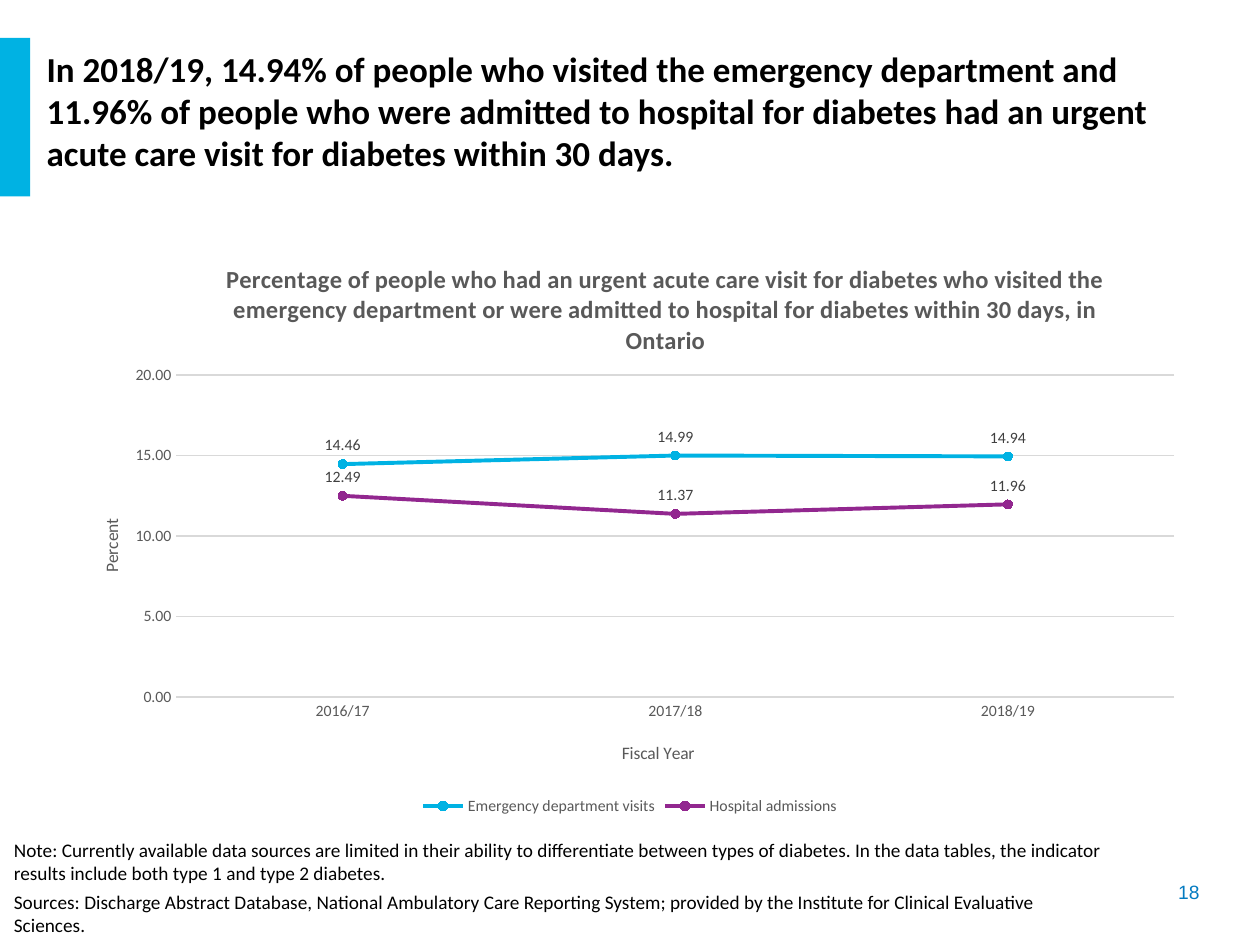
"""Build the slide on urgent acute care visits for diabetes in Ontario."""
from dataclasses import dataclass

from lxml.etree import SubElement
from pptx import Presentation
from pptx.chart.data import CategoryChartData
from pptx.dml.color import RGBColor
from pptx.enum.chart import (XL_CHART_TYPE, XL_LABEL_POSITION, XL_LEGEND_POSITION,
                             XL_MARKER_STYLE, XL_TICK_MARK)
from pptx.enum.dml import MSO_LINE
from pptx.enum.shapes import MSO_SHAPE
from pptx.enum.text import MSO_ANCHOR, MSO_AUTO_SIZE, PP_ALIGN
from pptx.oxml.ns import qn
from pptx.util import Inches, Pt

COLUMNS, ROWS = 100, 75
WIDTH, HEIGHT = Inches(10), Inches(7.5)
CYAN, PURPLE, GREY, PALE = "00B2E3", "92278F", "595959", "D9D9D9"
NUMBER_FORMAT = "####0.00"
YEARS = ["2016/17", "2017/18", "2018/19"]
HEADLINE = ("In 2018/19, 14.94% of people who visited the emergency department and \v"
            "11.96% of people who were admitted to hospital for diabetes had an urgent \v"
            "acute care visit for diabetes within 30 days.")
CHART_TITLE = ("Percentage of people who had an urgent acute care visit for diabetes "
               "who visited the emergency department or were admitted to hospital "
               "for diabetes within 30 days, in Ontario")
NOTES = [
    "Note: Currently available data sources are limited in their ability to differentiate "
    "between types of diabetes. In the data tables, the indicator results include both "
    "type 1 and type 2 diabetes.",
    "Sources: Discharge Abstract Database, National Ambulatory Care Reporting System; "
    "provided by the Institute for Clinical Evaluative Sciences.",
]


@dataclass(frozen=True)
class Area:
    """A rectangle in grid columns and rows."""
    column: float
    row: float
    columns: float
    rows: float

    def lengths(self) -> tuple:
        """Return left, top, width and height."""
        return (int(WIDTH * self.column / COLUMNS), int(HEIGHT * self.row / ROWS),
                int(WIDTH * self.columns / COLUMNS), int(HEIGHT * self.rows / ROWS))


@dataclass(frozen=True)
class Measure:
    """One line of the chart."""
    name: str
    values: tuple
    color: str


MEASURES = [
    Measure("Emergency department visits", (14.46, 14.99, 14.94), CYAN),
    Measure("Hospital admissions", (12.49, 11.37, 11.96), PURPLE),
]


def rgb(value: str) -> RGBColor:
    """Turn a hex string into a colour."""
    return RGBColor.from_string(value)


def style(font, size: float, color: str, bold: bool = False, name: str = "Calibri") -> None:
    """Format a font."""
    font.name, font.size, font.bold = name, Pt(size), bold
    font.color.rgb = rgb(color)


def place(box, area: Area) -> None:
    """Move a shape to an area."""
    box.left, box.top, box.width, box.height = area.lengths()


def prepare(box, anchor: MSO_ANCHOR) -> None:
    """Give a text shape wrapping, an anchor and a fixed size."""
    frame = box.text_frame
    frame.word_wrap = True
    frame.auto_size = MSO_AUTO_SIZE.NONE
    frame.vertical_anchor = anchor


def set_layout(element, inner: bool = False, **shares: float) -> None:
    """Fix a chart part at shares of the chart's size."""
    layout = element.find(qn("c:layout"))
    if layout is None:
        layout = element.makeelement(qn("c:layout"))
        text = element.find(qn("c:tx"))
        element.insert(0 if text is None else element.index(text) + 1, layout)
    for child in list(layout):
        layout.remove(child)
    manual = SubElement(layout, qn("c:manualLayout"))
    if inner:
        SubElement(manual, qn("c:layoutTarget"), val="inner")
    for key in ("x", "y"):
        SubElement(manual, qn(f"c:{key}Mode"), val="edge")
    for key, share in shares.items():
        SubElement(manual, qn(f"c:{key}"), val=str(share))


def write_title(title, text: str, size: float, x: float, y: float, bold: bool = False) -> None:
    """Write and place a chart or axis title."""
    title.text_frame.text = text
    style(title.text_frame.paragraphs[0].font, size, GREY, bold)
    set_layout(title._element, x=x, y=y)


def format_axis(axis, title: str, x: float, y: float) -> None:
    """Format one axis and its title."""
    axis.major_tick_mark = axis.minor_tick_mark = XL_TICK_MARK.NONE
    style(axis.tick_labels.font, 9, GREY)
    write_title(axis.axis_title, title, 10, x, y)


def format_series(series, color: str) -> None:
    """Format a line with its markers and labels."""
    series.smooth = False
    series.format.line.width = Pt(2.25)
    series.marker.style, series.marker.size = XL_MARKER_STYLE.CIRCLE, 5
    series.marker.format.fill.solid()
    series.marker.format.fill.fore_color.rgb = rgb(color)
    for line in (series.format.line, series.marker.format.line):
        line.color.rgb = rgb(color)
    labels = series.data_labels
    labels.show_value, labels.position = True, XL_LABEL_POSITION.ABOVE
    labels.number_format, labels.number_format_is_linked = NUMBER_FORMAT, False
    style(labels.font, 9, "404040")


def add_line_chart(page, area: Area) -> None:
    """Add the chart of both measures over the fiscal years."""
    data = CategoryChartData(number_format=NUMBER_FORMAT)
    data.categories = YEARS
    for measure in MEASURES:
        data.add_series(measure.name, measure.values)
    chart = page.shapes.add_chart(XL_CHART_TYPE.LINE_MARKERS, *area.lengths(), data).chart
    style(chart.font, 10, "000000")
    chart.has_title = True
    write_title(chart.chart_title, CHART_TITLE, 14, 0.14, 0.04, bold=True)
    chart.chart_title.include_in_layout = False
    chart.has_legend = True
    chart.legend.position = XL_LEGEND_POSITION.BOTTOM
    chart.legend.include_in_layout = False
    style(chart.legend.font, 9, GREY)
    years, percent = chart.category_axis, chart.value_axis
    format_axis(years, "Fiscal Year", 0.49, 0.86)
    format_axis(percent, "Percent", 0.03, 0.48)
    percent.minimum_scale, percent.maximum_scale, percent.major_unit = 0, 20, 5
    percent.tick_labels.number_format = NUMBER_FORMAT
    percent.tick_labels.number_format_is_linked = False
    percent.format.line.fill.background()
    for line in (years.format.line, percent.major_gridlines.format.line):
        line.color.rgb, line.width = rgb(PALE), Pt(0.75)
    plot = chart.plots[0]
    plot.vary_by_categories = False
    for series, measure in zip(plot.series, MEASURES):
        format_series(series, measure.color)
    set_layout(plot._element.getparent(), inner=True, x=0.1, y=0.24, w=0.88, h=0.55)


def add_accent(page, area: Area) -> None:
    """Add the coloured bar beside the headline."""
    bar = page.shapes.add_shape(MSO_SHAPE.RECTANGLE, *area.lengths())
    bar.shadow.inherit = False
    bar.fill.solid()
    bar.fill.fore_color.rgb = rgb(CYAN)
    bar.line.fill.background()


def fill_headline(box, area: Area) -> None:
    """Write the headline in the title placeholder."""
    place(box, area)
    prepare(box, MSO_ANCHOR.MIDDLE)
    box.line.color.rgb, box.line.width = rgb("FFFFFF"), Pt(3)
    box.line.dash_style = MSO_LINE.ROUND_DOT
    box.text_frame.text = HEADLINE
    para = box.text_frame.paragraphs[0]
    para.alignment = PP_ALIGN.LEFT
    style(para.font, 20, "000000", bold=True)


def fill_notes(box, area: Area) -> None:
    """Write the note and sources in the body placeholder."""
    place(box, area)
    prepare(box, MSO_ANCHOR.TOP)
    box.text_frame.text = "\n".join(NOTES)
    for para in box.text_frame.paragraphs:
        para.space_before = Pt(3.3)
        properties = para._p.get_or_add_pPr()
        properties.set("marL", "0")
        properties.set("indent", "0")
        SubElement(properties, qn("a:buNone"))
        style(para.font, 11, "000000")


def add_page_number(page, area: Area, number: int) -> None:
    """Add the page number at the lower right."""
    box = page.shapes.add_textbox(*area.lengths())
    prepare(box, MSO_ANCHOR.MIDDLE)
    para = box.text_frame.paragraphs[0]
    para.text, para.alignment = str(number), PP_ALIGN.RIGHT
    style(para.font, 11, "047BC1", name="Arial")


def main() -> None:
    """Build and save the deck."""
    deck = Presentation()
    deck.slide_width, deck.slide_height = WIDTH, HEIGHT
    page = deck.slides.add_slide(deck.slide_layouts[1])
    add_accent(page, Area(0, 3, 2.4, 12.6))
    fill_headline(page.shapes.title, Area(2.7, 3.2, 97.3, 11.1))
    fill_notes(page.placeholders[1], Area(0.1, 66, 89, 9))
    add_line_chart(page, Area(5, 18.6, 90, 46.5))
    add_page_number(page, Area(84.5, 69.3, 11.7, 2.9), 18)
    deck.save("out.pptx")


if __name__ == "__main__":
    main()
